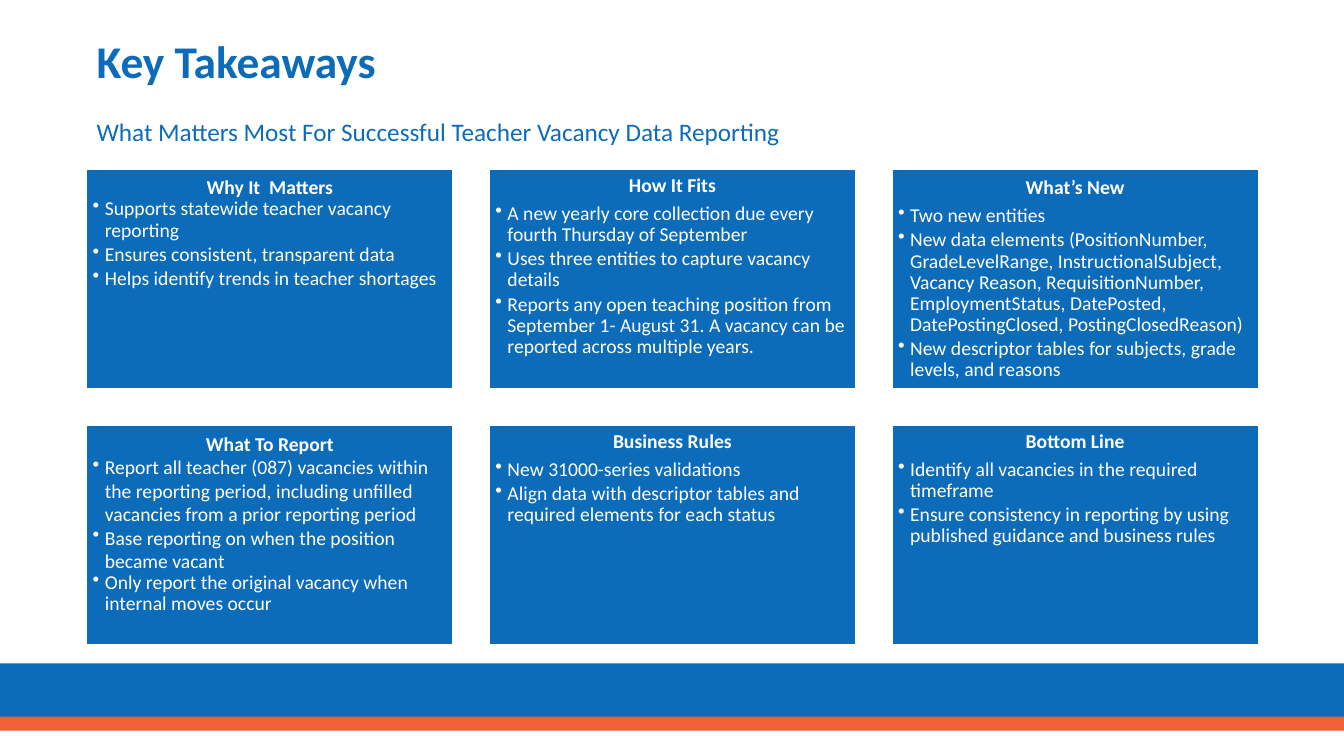
from dataclasses import dataclass

from lxml.etree import SubElement
from pptx import Presentation
from pptx.dml.color import RGBColor
from pptx.enum.shapes import MSO_SHAPE
from pptx.enum.text import MSO_ANCHOR, PP_ALIGN
from pptx.oxml.ns import qn
from pptx.util import Inches, Pt


@dataclass(frozen=True)
class Theme:
    font: str = "Calibri"
    blue: RGBColor = RGBColor(0x0D, 0x6C, 0xB9)
    orange: RGBColor = RGBColor(0xF1, 0x60, 0x38)
    white: RGBColor = RGBColor(0xFF, 0xFF, 0xFF)
    title_size: float = 32.4
    subtitle_size: float = 18
    card_size: float = 14


THEME = Theme()


@dataclass(frozen=True)
class Spacing:
    line: float
    after: float


# Paragraph spacing: line multiple, points after
PLAIN = Spacing(1.0, 0)
TIGHT_HEADING = Spacing(0.9, 4.9)
LOOSE_HEADING = Spacing(1.0, 4.9)
BULLET = Spacing(0.9, 2.1)

# Heading, heading spacing, bullets with their spacing
CARDS = [
    ("Why It  Matters", PLAIN, [
        ("Supports statewide teacher vacancy reporting", BULLET),
        ("Ensures consistent, transparent data", BULLET),
        ("Helps identify trends in teacher shortages", BULLET),
    ]),
    ("How It Fits", TIGHT_HEADING, [
        ("A new yearly core collection due every fourth Thursday of September", BULLET),
        ("Uses three entities to capture vacancy details", BULLET),
        ("Reports any open teaching position from September 1- August 31. "
         "A vacancy can be reported across multiple years.", BULLET),
    ]),
    ("What’s New", LOOSE_HEADING, [
        ("Two new entities", BULLET),
        ("New data elements (PositionNumber, GradeLevelRange, InstructionalSubject, "
         "Vacancy Reason, RequisitionNumber, EmploymentStatus, DatePosted, "
         "DatePostingClosed, PostingClosedReason)", BULLET),
        ("New descriptor tables for subjects, grade levels, and reasons", BULLET),
    ]),
    ("What To Report", PLAIN, [
        ("Report all teacher (087) vacancies within the reporting period, "
         "including unfilled vacancies from a prior reporting period", PLAIN),
        ("Base reporting on when the position became vacant", PLAIN),
        ("Only report the original vacancy when internal moves occur", BULLET),
    ]),
    ("Business Rules", TIGHT_HEADING, [
        ("New 31000-series validations", BULLET),
        ("Align data with descriptor tables and required elements for each status", BULLET),
    ]),
    ("Bottom Line", TIGHT_HEADING, [
        ("Identify all vacancies in the required timeframe", BULLET),
        ("Ensure consistency in reporting by using published guidance "
         "and business rules", BULLET),
    ]),
]


def add_run(paragraph, text, size, color, bold=False):
    run = paragraph.add_run()
    run.text = text
    run.font.name = THEME.font
    run.font.size = Pt(size)
    run.font.bold = bold
    run.font.color.rgb = color


def add_rectangle(slide, left, top, width, height, fill):
    rectangle = slide.shapes.add_shape(
        MSO_SHAPE.RECTANGLE, Inches(left), Inches(top), Inches(width), Inches(height))
    rectangle.shadow.inherit = False
    rectangle.fill.solid()
    rectangle.fill.fore_color.rgb = fill
    rectangle.line.fill.background()
    return rectangle


def add_line_of_text(slide, left, top, width, height, text, size, bold=False):
    box = slide.shapes.add_textbox(
        Inches(left), Inches(top), Inches(width), Inches(height))
    frame = box.text_frame
    frame.word_wrap = True
    frame.vertical_anchor = MSO_ANCHOR.MIDDLE
    add_run(frame.paragraphs[0], text, size, THEME.blue, bold)


def apply_spacing(paragraph, spacing):
    paragraph.line_spacing = spacing.line
    paragraph.space_before = Pt(0)
    paragraph.space_after = Pt(spacing.after)


def make_bullet(paragraph):
    paragraph.alignment = PP_ALIGN.LEFT
    paragraph.level = 1
    properties = paragraph._p.get_or_add_pPr()
    indent = Inches(0.12)
    properties.set("marL", str(indent))
    properties.set("indent", str(-indent))
    SubElement(properties, qn("a:buChar")).set("char", "•")


def add_card(slide, left, top, width, height, heading, heading_spacing, bullets):
    card = add_rectangle(slide, left, top, width, height, THEME.blue)
    card.line.color.rgb = THEME.white
    card.line.width = Pt(1)
    frame = card.text_frame
    frame.word_wrap = True
    frame.vertical_anchor = MSO_ANCHOR.TOP
    frame.margin_left = frame.margin_right = Inches(0.06)
    frame.margin_top = frame.margin_bottom = Inches(0.06)

    heading_line = frame.paragraphs[0]
    heading_line.alignment = PP_ALIGN.CENTER
    apply_spacing(heading_line, heading_spacing)
    add_run(heading_line, heading, THEME.card_size, THEME.white, bold=True)

    for text, spacing in bullets:
        item = frame.add_paragraph()
        apply_spacing(item, spacing)
        make_bullet(item)
        add_run(item, text, THEME.card_size, THEME.white)


def add_card_grid(slide, left, top, width, height, columns=3, rows=2):
    gap = 0.36
    card_width = (width - gap * (columns - 1)) / columns
    card_height = (height - gap * (rows - 1)) / rows
    for index, (heading, spacing, bullets) in enumerate(CARDS):
        row, column = divmod(index, columns)
        add_card(slide, left + column * (card_width + gap),
                 top + row * (card_height + gap),
                 card_width, card_height, heading, spacing, bullets)


def add_header(slide, left, top, width):
    add_line_of_text(slide, left, top, width, 0.82, "Key Takeaways",
                     THEME.title_size, bold=True)
    add_line_of_text(slide, left, top + 0.91, 8.64, 0.4,
                     "What Matters Most For Successful Teacher Vacancy Data Reporting",
                     THEME.subtitle_size)


def add_footer(slide, left, top, width):
    add_rectangle(slide, left, top, width, 0.58, THEME.blue)
    add_rectangle(slide, left, top + 0.53, width, 0.14, THEME.orange)


def main():
    presentation = Presentation()
    presentation.slide_width = Inches(13.33)
    presentation.slide_height = Inches(7.5)
    slide = presentation.slides.add_slide(presentation.slide_layouts[6])
    add_footer(slide, 0, 6.58, 13.33)
    add_header(slide, 0.86, 0.19, 12.16)
    add_card_grid(slide, 0.86, 1.68, 11.62, 4.72)
    presentation.save("out.pptx")


if __name__ == "__main__":
    main()
